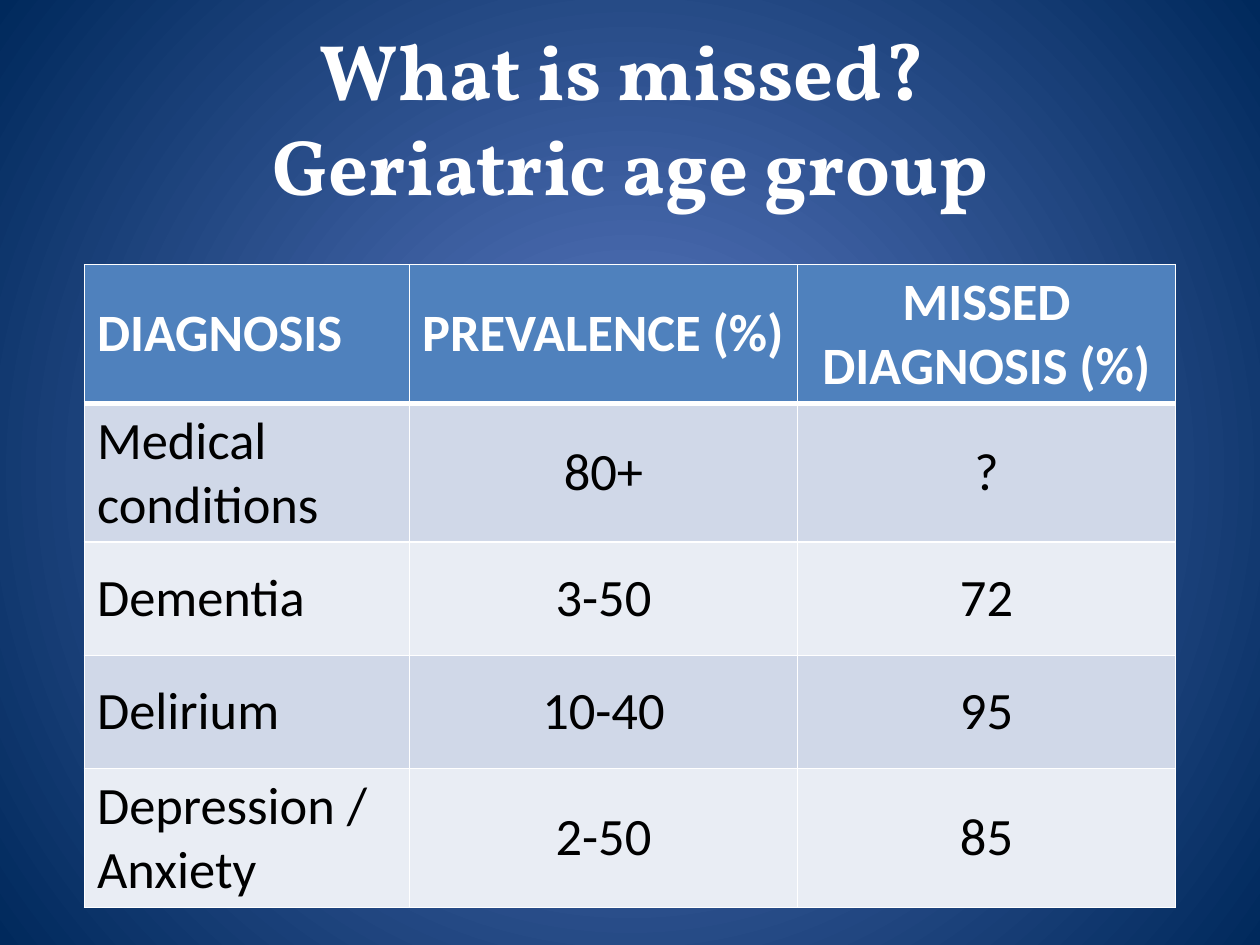
from lxml.etree import SubElement
from pptx import Presentation
from pptx.dml.color import RGBColor
from pptx.enum.text import MSO_ANCHOR, PP_ALIGN
from pptx.oxml import parse_xml
from pptx.oxml.ns import nsdecls, qn
from pptx.util import Inches, Pt

WHITE = RGBColor(0xFF, 0xFF, 0xFF)
BLACK = RGBColor(0x00, 0x00, 0x00)
GLOW_BLUE = RGBColor(0x5E, 0x7C, 0xC5)
DEEP_BLUE = RGBColor(0x00, 0x29, 0x5C)
HEADER_BLUE = RGBColor(0x4F, 0x81, 0xBD)
DARK_BAND = RGBColor(0xD0, 0xD8, 0xE8)
LIGHT_BAND = RGBColor(0xE9, 0xED, 0xF4)

TITLE = "What is missed? \vGeriatric age group"
DIAGNOSES = [
    ("DIAGNOSIS", "PREVALENCE (%)", "MISSED DIAGNOSIS (%)"),
    ("Medical conditions", "80+", "?"),
    ("Dementia", "3-50", "72"),
    ("Delirium", "10-40", "95"),
    ("Depression / Anxiety", "2-50", "85"),
]
COLUMN_WIDTHS = (2.58, 3.08, 3)
ROW_HEIGHTS = (1.02, 1.02, 0.9, 0.9, 1.02)


def write_text(text_frame, text, *, font, size, color, bold=False, alignment=PP_ALIGN.LEFT):
    """Write one formatted paragraph into a text frame."""
    text_frame.word_wrap = True
    paragraph = text_frame.paragraphs[0]
    paragraph.text = text
    paragraph.alignment = alignment
    for run in paragraph.runs:
        run.font.name = font
        run.font.size = Pt(size)
        run.font.bold = bold
        run.font.color.rgb = color


def paint_background(slide):
    """Fill the slide with a circular gradient that glows from its centre."""
    fill = slide.background.fill
    fill.gradient()
    for stop, position, color in zip(fill.gradient_stops, (0, 1), (GLOW_BLUE, DEEP_BLUE)):
        stop.position = position
        stop.color.rgb = color
    gradient = slide.element.find(".//" + qn("a:gradFill"))
    linear = gradient.find(qn("a:lin"))
    circle = parse_xml(
        f'<a:path {nsdecls("a")} path="circle">'
        '<a:fillToRect l="50000" t="50000" r="50000" b="50000"/></a:path>'
    )
    gradient.replace(linear, circle)


def add_title(slide, left, top, width, height):
    """Place the centred title in the given box."""
    shape = slide.shapes.add_textbox(left, top, width, height)
    shape.text_frame.vertical_anchor = MSO_ANCHOR.MIDDLE
    write_text(shape.text_frame, TITLE, font="Vollkorn", size=45, color=WHITE,
               bold=True, alignment=PP_ALIGN.CENTER)


def set_borders(cell, top, bottom):
    """Draw white cell borders with the given top and bottom point widths."""
    properties = cell._tc.get_or_add_tcPr()
    widths = {"lnL": 1, "lnR": 1, "lnT": top, "lnB": bottom}
    for index, (side, width) in enumerate(widths.items()):
        line = parse_xml(f'<a:{side} {nsdecls("a")} w="{Pt(width)}"/>')
        fill = SubElement(line, qn("a:solidFill"))
        SubElement(fill, qn("a:srgbClr"), val=str(WHITE))
        properties.insert(index, line)


def add_diagnosis_table(slide, left, top, width, height):
    """Place the diagnosis table, sharing the box among its columns and rows."""
    table = slide.shapes.add_table(
        len(DIAGNOSES), len(COLUMN_WIDTHS), left, top, width, height).table
    table.horz_banding = False
    for column, share in zip(table.columns, COLUMN_WIDTHS):
        column.width = int(width * share / sum(COLUMN_WIDTHS))
    for row, share in zip(table.rows, ROW_HEIGHTS):
        row.height = int(height * share / sum(ROW_HEIGHTS))
    for row_index, values in enumerate(DIAGNOSES):
        header = row_index == 0
        band = DARK_BAND if row_index % 2 else LIGHT_BAND
        for column_index, value in enumerate(values):
            cell = table.cell(row_index, column_index)
            cell.vertical_anchor = MSO_ANCHOR.MIDDLE
            cell.fill.solid()
            cell.fill.fore_color.rgb = HEADER_BLUE if header else band
            set_borders(cell, top=3 if row_index == 1 else 1, bottom=3 if header else 1)
            left_aligned = column_index == 0 or (header and column_index == 1)
            write_text(cell.text_frame, value, font="Calibri", size=30,
                       color=WHITE if header else BLACK, bold=header,
                       alignment=PP_ALIGN.LEFT if left_aligned else PP_ALIGN.CENTER)


def main():
    """Build and save the slide."""
    presentation = Presentation()
    presentation.slide_width = Inches(10)
    presentation.slide_height = Inches(7.5)
    slide = presentation.slides.add_slide(presentation.slide_layouts[6])
    paint_background(slide)
    add_title(slide, Inches(0.5), Inches(0.3), Inches(9), Inches(1.25))
    add_diagnosis_table(slide, Inches(0.67), Inches(2.1),
                        Inches(sum(COLUMN_WIDTHS)), Inches(sum(ROW_HEIGHTS)))
    presentation.save("out.pptx")


if __name__ == "__main__":
    main()
